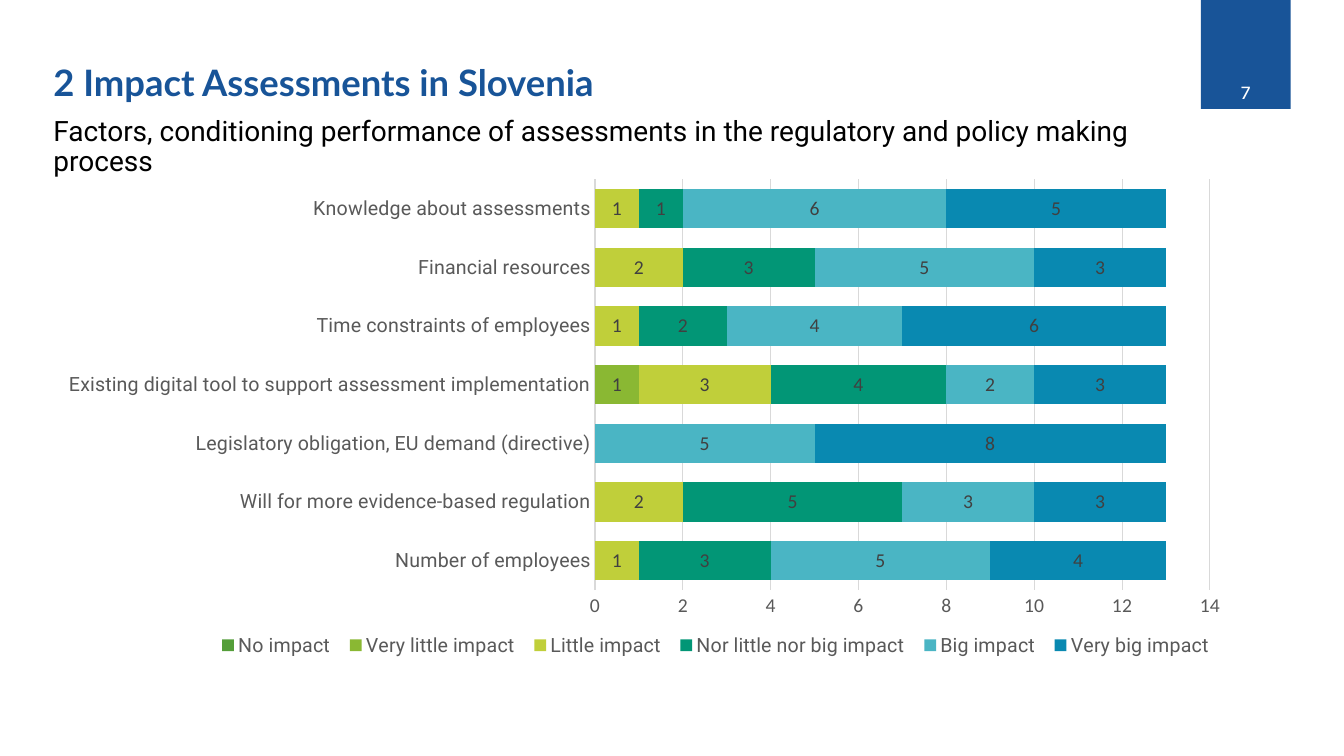
from lxml import etree
from pptx import Presentation
from pptx import util as u
from pptx.chart.data import CategoryChartData
from pptx.dml.color import RGBColor
from pptx.enum import chart as charts, shapes, text
from pptx.oxml.ns import qn

PX = 9144  # 100 px to the inch
BLUE = RGBColor(0x18, 0x54, 0x98)
BLACK = RGBColor(0, 0, 0)
WHITE = RGBColor(255, 255, 255)
GRID_GRAY = RGBColor(0xD9, 0xD9, 0xD9)
AXIS_GRAY = RGBColor(0x59, 0x59, 0x59)
LABEL_GRAY = RGBColor(0x40, 0x40, 0x40)

FACTORS = [
    "Number of employees",
    "Will for more evidence-based regulation",
    "Legislatory obligation, EU demand (directive)",
    "Existing digital tool to support assessment implementation",
    "Time constraints of employees",
    "Financial resources",
    "Knowledge about assessments",
]
IMPACTS = [
    ("No impact", [None] * 7, RGBColor(0x54, 0x9E, 0x39)),
    ("Very little impact", [None, None, None, 1, None, None, None], RGBColor(0x8A, 0xB8, 0x33)),
    ("Little impact", [1, 2, None, 3, 1, 2, 1], RGBColor(0xC0, 0xCF, 0x3A)),
    ("Nor little nor big impact", [3, 5, None, 4, 2, 3, 1], RGBColor(0x02, 0x96, 0x76)),
    ("Big impact", [5, 3, 5, 2, 4, 5, 6], RGBColor(0x4A, 0xB5, 0xC4)),
    ("Very big impact", [4, 3, 8, 3, 6, 3, 5], RGBColor(0x09, 0x89, 0xB1)),
]


def write(shape, words, font="Roboto", size=20, color=BLACK, bold=False, left=0,
          align=text.PP_ALIGN.LEFT, anchor=text.MSO_ANCHOR.TOP):
    frame = shape.text_frame
    frame.word_wrap = True
    frame.auto_size = text.MSO_AUTO_SIZE.NONE
    frame.vertical_anchor = anchor
    frame.margin_left, frame.margin_right = left * PX, 10 * PX
    frame.margin_top = frame.margin_bottom = 5 * PX
    paragraph = frame.paragraphs[0]
    paragraph.alignment = align
    paragraph.line_spacing = 0.9
    run = paragraph.add_run()
    run.text = words
    run.font.name, run.font.size, run.font.bold = font, u.Pt(size), bold
    run.font.color.rgb = color


def place(parent, index, inner, **box):
    """Give a chart part a fixed place, in fractions of the chart."""
    for old in parent.findall(qn("c:layout")):
        parent.remove(old)
    layout = etree.Element(qn("c:layout"))
    manual = etree.SubElement(layout, qn("c:manualLayout"))
    settings = {"xMode": "edge", "yMode": "edge", **box}
    if inner:
        settings = {"layoutTarget": "inner", **settings}
    for name, value in settings.items():
        etree.SubElement(manual, qn("c:" + name)).set("val", str(value))
    parent.insert(index, layout)


presentation = Presentation()
presentation.slide_width, presentation.slide_height = 1333 * PX, 750 * PX
slide = presentation.slides.add_slide(presentation.slide_layouts[5])

# Title and subtitle
title = slide.shapes.title
title.left, title.top, title.width, title.height = 53 * PX, 40 * PX, 1099 * PX, 69 * PX
write(title, "2 Impact Assessments in Slovenia", font="Lato", size=26, color=BLUE,
      bold=True, anchor=text.MSO_ANCHOR.BOTTOM)
subtitle = slide.shapes.add_textbox(53 * PX, 111 * PX, 1138 * PX, 53 * PX)
write(subtitle, "Factors, conditioning performance of assessments in the regulatory "
      "and policy making process")

# Page number tab
page_tab = slide.shapes.add_shape(
    shapes.MSO_SHAPE.RECTANGLE, 1191 * PX, -1 * PX, 89 * PX, 109 * PX)
page_tab.shadow.inherit = False
page_tab.fill.solid()
page_tab.fill.fore_color.rgb = BLUE
page_tab.line.fill.background()
write(page_tab, "7", font="Karla", size=14, color=WHITE, left=10,
      align=text.PP_ALIGN.CENTER, anchor=text.MSO_ANCHOR.BOTTOM)

# Stacked bar chart
chart_data = CategoryChartData()
chart_data.categories = FACTORS
for name, values, color in IMPACTS:
    chart_data.add_series(name, values)
chart = slide.shapes.add_chart(
    charts.XL_CHART_TYPE.BAR_STACKED, 40 * PX, 168 * PX, 1196 * PX, 497 * PX,
    chart_data).chart
chart.has_title = False
chart.font.name, chart.font.size = "Calibri", u.Pt(10)
chart.font.color.rgb = BLACK
plot = chart.plots[0]
plot.gap_width, plot.overlap, plot.vary_by_categories = 50, 100, False
for series, (name, values, color) in zip(plot.series, IMPACTS):
    series.format.fill.solid()
    series.format.fill.fore_color.rgb = color
    labels = series.data_labels
    labels.show_value = True
    labels.position = charts.XL_LABEL_POSITION.CENTER
    labels.font.name, labels.font.size = "Calibri", u.Pt(14)
    labels.font.color.rgb = LABEL_GRAY

# Axes and legend
factor_axis, count_axis = chart.category_axis, chart.value_axis
chart.has_legend = True
legend = chart.legend
legend.position = charts.XL_LEGEND_POSITION.BOTTOM
legend.include_in_layout = False
for font, name in ((factor_axis.tick_labels.font, "Roboto"),
                   (count_axis.tick_labels.font, "Calibri"),
                   (legend.font, "Roboto")):
    font.name, font.size = name, u.Pt(14)
    font.color.rgb = AXIS_GRAY
for axis in (factor_axis, count_axis):
    axis.major_tick_mark = axis.minor_tick_mark = charts.XL_TICK_MARK.NONE
count_axis.minimum_scale, count_axis.maximum_scale, count_axis.major_unit = 0, 14, 2
count_axis.has_major_gridlines = True
count_axis.format.line.fill.background()
for line in (factor_axis.format.line, count_axis.major_gridlines.format.line):
    line.color.rgb = GRID_GRAY
    line.width = u.Pt(0.75)

# Plot and legend positions
chart_space = chart.font and chart.plots[0]._element.getroottree().getroot()
place(chart_space.find(".//" + qn("c:plotArea")), 0, True, x=0.46, y=0.02, w=0.51, h=0.82)
place(chart_space.find(".//" + qn("c:legend")), 1, False, x=0.14, y=0.92, w=0.84, h=0.06)

presentation.save("out.pptx")
